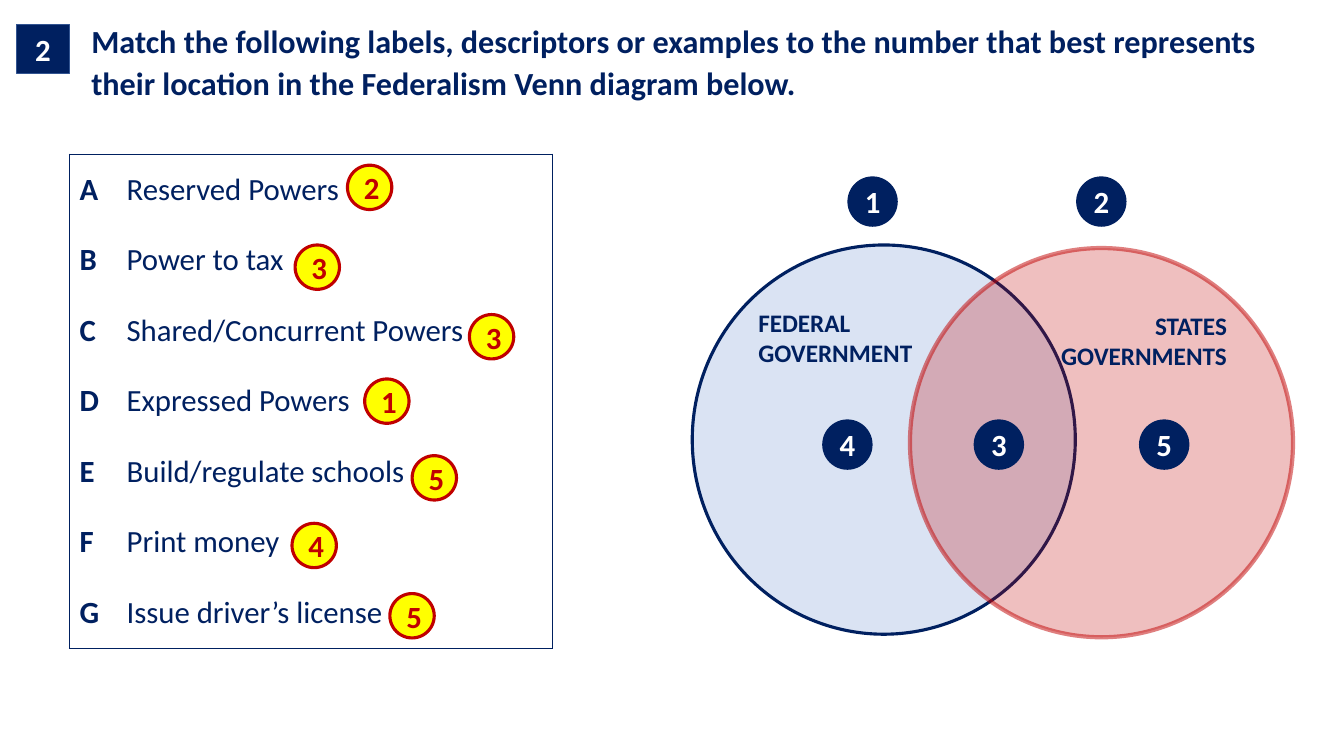
"""Build the Federalism Venn diagram matching question with its answers."""
from dataclasses import dataclass

from lxml.etree import SubElement
from pptx import Presentation
from pptx.dml.color import RGBColor as Rgb
from pptx.enum.shapes import MSO_SHAPE as Preset
from pptx.enum.text import MSO_ANCHOR as Anchor, PP_ALIGN as Align
from pptx.oxml.ns import qn
from pptx.util import Pt

QUESTION_NUMBER = "2"
QUESTION = ("Match the following labels, descriptors or examples to the number that best "
            "represents their location in the Federalism Venn diagram below.")
ITEMS = [
    ("A", "Reserved Powers", "2", (248.2, 118)),
    ("B", "Power to tax", "3", (210.8, 175)),
    ("C", "Shared/Concurrent Powers", "3", (335.3, 224.7)),
    ("D", "Expressed Powers", "1", (260.5, 270.7)),
    ("E", "Build/regulate schools", "5", (294.4, 325.5)),
    ("F", "Print money", "4", (208.6, 373.8)),
    ("G", "Issue driver’s license", "5", (278.5, 424)),
]
REGION_NUMBERS = [
    ("3", (695.5, 299.6)),
    ("1", (605.3, 126)),
    ("2", (768.7, 126)),
    ("4", (587.3, 299.6)),
    ("5", (813.6, 299.6)),
]


@dataclass(frozen=True)
class Theme:
    """Colours, font and type sizes of the slide."""
    navy: str = "002060"
    edge: str = "325491"
    pale: str = "DAE3F3"
    red: str = "C00000"
    yellow: str = "FFFF00"
    white: str = "FFFFFF"
    font: str = "Calibri"
    question: float = 23
    body: float = 22
    label: float = 18


THEME = Theme()
VENN = [
    ("FEDERAL\nGOVERNMENT", (494.5, 175), Align.LEFT,
     (THEME.pale, 100), (THEME.navy, 2.25, 100)),
    ("STATES\nGOVERNMENTS", (650, 177.2), Align.RIGHT,
     (THEME.red, 25), (THEME.red, 3, 50)),
]
VENN_SIZE = (273.6, 278)
REGION_SIZE, ANSWER_SIZE = 36, 31.7
QUESTION_CORNER, QUESTION_WIDTH, QUESTION_HEIGHT = (59.8, 14.4), 854.6, 41
LIST_CORNER, LIST_COLUMNS, ROW_HEIGHT = (49.6, 110.2), (33.7, 311.2), 50.4


def write(frame, text, size, color, bold=True, align=Align.LEFT):
    """Put text in a frame and format its paragraphs and runs."""
    frame.text = text
    for paragraph in frame.paragraphs:
        paragraph.alignment = align
        for run in paragraph.runs:
            run.font.name, run.font.size, run.font.bold = THEME.font, Pt(size), bold
            run.font.color.rgb = Rgb.from_string(color)


def set_opacity(colors, percent):
    """Make the given colour elements partly transparent."""
    if percent < 100:
        for color in colors:
            SubElement(color, qn("a:alpha")).set("val", str(percent * 1000))


def add_figure(shapes, preset, corner, size, fill, line=None):
    """Add a preset shape; fill is colour and opacity, line adds a width between them."""
    figure = shapes.add_shape(preset, *map(Pt, (*corner, *size)))
    figure.shadow.inherit = False
    figure.fill.solid()
    figure.fill.fore_color.rgb = Rgb.from_string(fill[0])
    properties = figure.element.spPr
    set_opacity(properties.xpath("./a:solidFill/a:srgbClr"), fill[1])
    if line:
        figure.line.color.rgb = Rgb.from_string(line[0])
        figure.line.width = Pt(line[1])
        set_opacity(properties.xpath("./a:ln/a:solidFill/a:srgbClr"), line[2])
    else:
        figure.line.fill.background()
    return figure


def add_badge(shapes, number, corner, size, fill, color, line=None, preset=Preset.OVAL):
    """Add a small shape with a centred number."""
    badge = add_figure(shapes, preset, corner, size, (fill, 100), line)
    badge.text_frame.vertical_anchor = Anchor.MIDDLE
    write(badge.text_frame, number, THEME.body, color, align=Align.CENTER)


def add_plain_table(slide, corner, widths, rows, row_height):
    """Add a table without banding and with the given column widths."""
    box = (*corner, sum(widths), rows * row_height)
    table = slide.shapes.add_table(rows, len(widths), *map(Pt, box)).table
    table.first_row = table.horz_banding = False
    for column, width in zip(table.columns, widths):
        column.width = Pt(width)
    return table


def finish_cell(cell, outer_sides=""):
    """Draw the cell's outer sides, hide the others and clear the fill."""
    properties = cell._tc.get_or_add_tcPr()
    for side in "LRTB":
        border = SubElement(properties, qn(f"a:ln{side}"), w=str(Pt(1)))
        if side in outer_sides:
            SubElement(SubElement(border, qn("a:solidFill")), qn("a:srgbClr"), val=THEME.navy)
        else:
            SubElement(border, qn("a:noFill"))
    cell.fill.background()


def add_question(slide):
    """Add the question and its number."""
    table = add_plain_table(slide, QUESTION_CORNER, [QUESTION_WIDTH], 1, QUESTION_HEIGHT)
    cell = table.cell(0, 0)
    cell.margin_left = cell.margin_right = Pt(5.4)
    cell.margin_top = cell.margin_bottom = Pt(0)
    cell.vertical_anchor = Anchor.TOP
    write(cell.text_frame, QUESTION, THEME.question, THEME.navy)
    cell.text_frame.paragraphs[0].line_spacing = 1.07
    finish_cell(cell)
    add_badge(slide.shapes, QUESTION_NUMBER, (12, 17.3), (37.5, 35.3), THEME.navy,
              THEME.white, (THEME.edge, 1, 100), Preset.RECTANGLE)


def add_venn(slide):
    """Add the two overlapping circles and the region numbers."""
    circles = slide.shapes.add_group_shape().shapes
    for label, corner, align, fill, line in VENN:
        circle = add_figure(circles, Preset.OVAL, corner, VENN_SIZE, fill, line)
        circle.text_frame.vertical_anchor = Anchor.TOP
        write(circle.text_frame, label, THEME.label, THEME.navy, align=align)
    for number, corner in REGION_NUMBERS:
        add_badge(slide.shapes, number, corner, (REGION_SIZE, REGION_SIZE),
                  THEME.navy, THEME.white)


def add_items(slide):
    """Add the lettered list and its answers."""
    last = len(ITEMS) - 1
    table = add_plain_table(slide, LIST_CORNER, LIST_COLUMNS, len(ITEMS), ROW_HEIGHT)
    for row, (letter, wording, _, _) in enumerate(ITEMS):
        for column, text in enumerate((letter, wording)):
            cell = table.cell(row, column)
            cell.vertical_anchor = Anchor.MIDDLE
            write(cell.text_frame, text, THEME.body, THEME.navy, bold=column == 0)
            finish_cell(cell, "LR"[column] + "T" * (row == 0) + "B" * (row == last))
    for _, _, answer, corner in ITEMS:
        add_badge(slide.shapes, answer, corner, (ANSWER_SIZE, ANSWER_SIZE),
                  THEME.yellow, THEME.red, (THEME.red, 2.25, 100))


def main():
    """Build and save the slide."""
    deck = Presentation()
    deck.slide_width, deck.slide_height = Pt(960), Pt(540)
    slide = deck.slides.add_slide(deck.slide_layouts[6])
    add_question(slide)
    add_venn(slide)
    add_items(slide)
    deck.save("out.pptx")


if __name__ == "__main__":
    main()
